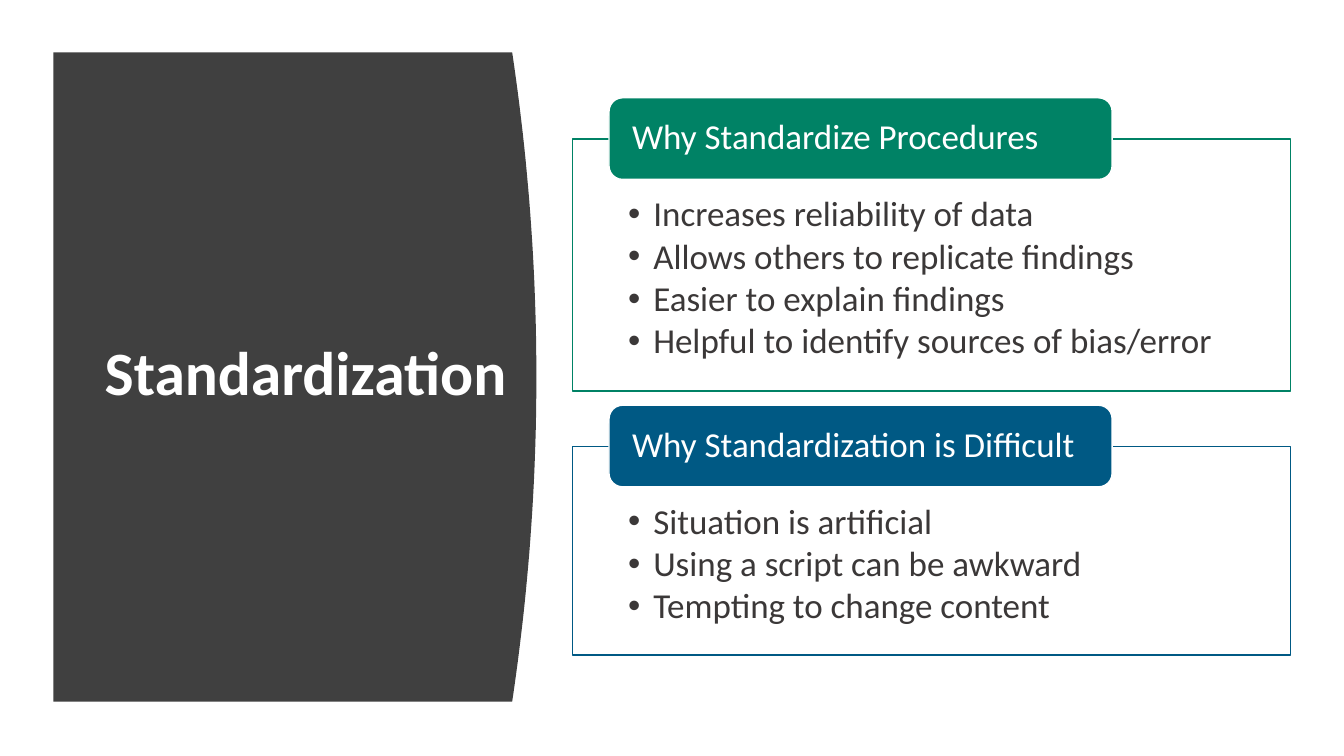
from lxml import etree
from pptx import Presentation
from pptx import util as u
from pptx.dml.color import RGBColor
from pptx.enum import shapes, text
from pptx.oxml.ns import qn

PX = 9144
COLORS = {
    "panel": "404040",
    "white": "FFFFFF",
    "body": "3B3838",
    "green": "008265",
    "blue": "005984",
}
SECTIONS = [
    ("Why Standardize Procedures", "green", 97, 250, [
        "Increases reliability of data",
        "Allows others to replicate findings",
        "Easier to explain findings",
        "Helpful to identify sources of bias/error",
    ]),
    ("Why Standardization is Difficult", "blue", 402, 207, [
        "Situation is artificial",
        "Using a script can be awkward",
        "Tempting to change content",
    ]),
]


def px(*lengths):
    return [round(length * PX) for length in lengths]


def color(name):
    return RGBColor.from_string(COLORS[name])


def paint(shape, fill, line=None):
    shape.shadow.inherit = False
    shape.fill.solid()
    shape.fill.fore_color.rgb = color(fill)
    if line:
        shape.line.color.rgb = color(line)
        shape.line.width = u.Pt(1)
    else:
        shape.line.fill.background()


def add_bullet(para):
    properties = para._p.get_or_add_pPr()
    properties.set("marL", str(25 * PX))
    properties.set("indent", str(-25 * PX))
    font = etree.SubElement(properties, qn("a:buFont"))
    font.set("typeface", "Arial")
    mark = etree.SubElement(properties, qn("a:buChar"))
    mark.set("char", "•")


def write(shape, lines, size=25, ink="white", bold=False, bullet=False,
          after=0, insets=(10, 5, 10, 5), anchor=text.MSO_ANCHOR.MIDDLE):
    frame = shape.text_frame
    frame.word_wrap = True
    frame.vertical_anchor = anchor
    (frame.margin_left, frame.margin_top,
     frame.margin_right, frame.margin_bottom) = px(*insets)
    for index, line in enumerate(lines):
        para = frame.add_paragraph() if index else frame.paragraphs[0]
        para.alignment = text.PP_ALIGN.LEFT
        para.line_spacing = 0.9
        para.space_after = u.Pt(after)
        if bullet:
            add_bullet(para)
        span = para.add_run()
        span.text = line
        span.font.name = "Calibri"
        span.font.size = u.Pt(size)
        span.font.bold = bold
        span.font.color.rgb = color(ink)


def add_panel(page, left, top, edge, height, bulge, steps=48):
    builder = page.shapes.build_freeform(*px(left, top))
    curve = []
    for step in range(steps + 1):
        offset = 2 * step / steps - 1
        curve.append(px(edge + bulge * (1 - offset ** 2),
                        top + height * step / steps))
    builder.add_line_segments(curve + [px(left, top + height)], close=True)
    paint(builder.convert_to_shape(), "panel")


def add_section(page, heading, accent, top, height, points):
    frame = page.shapes.add_shape(
        shapes.MSO_SHAPE.RECTANGLE, *px(568, top + 41, 712, height))
    paint(frame, "white", accent)
    write(frame, points, ink="body", bullet=True, after=3.3,
          insets=(55, 57, 55, 19), anchor=text.MSO_ANCHOR.TOP)
    label = page.shapes.add_shape(
        shapes.MSO_SHAPE.ROUNDED_RECTANGLE, *px(604, top, 499, 81))
    paint(label, accent, "white")
    write(label, [heading], insets=(19, 0, 19, 0))


def main():
    deck = Presentation()
    deck.slide_width, deck.slide_height = px(1333, 750)
    page = deck.slides.add_slide(deck.slide_layouts[6])
    add_panel(page, left=53, top=52, edge=508, height=644, bulge=24)
    title = page.shapes.add_textbox(*px(94, 111, 448, 524))
    write(title, ["Standardization"], size=44, bold=True)
    for section in SECTIONS:
        add_section(page, *section)
    deck.save("out.pptx")


if __name__ == "__main__":
    main()
